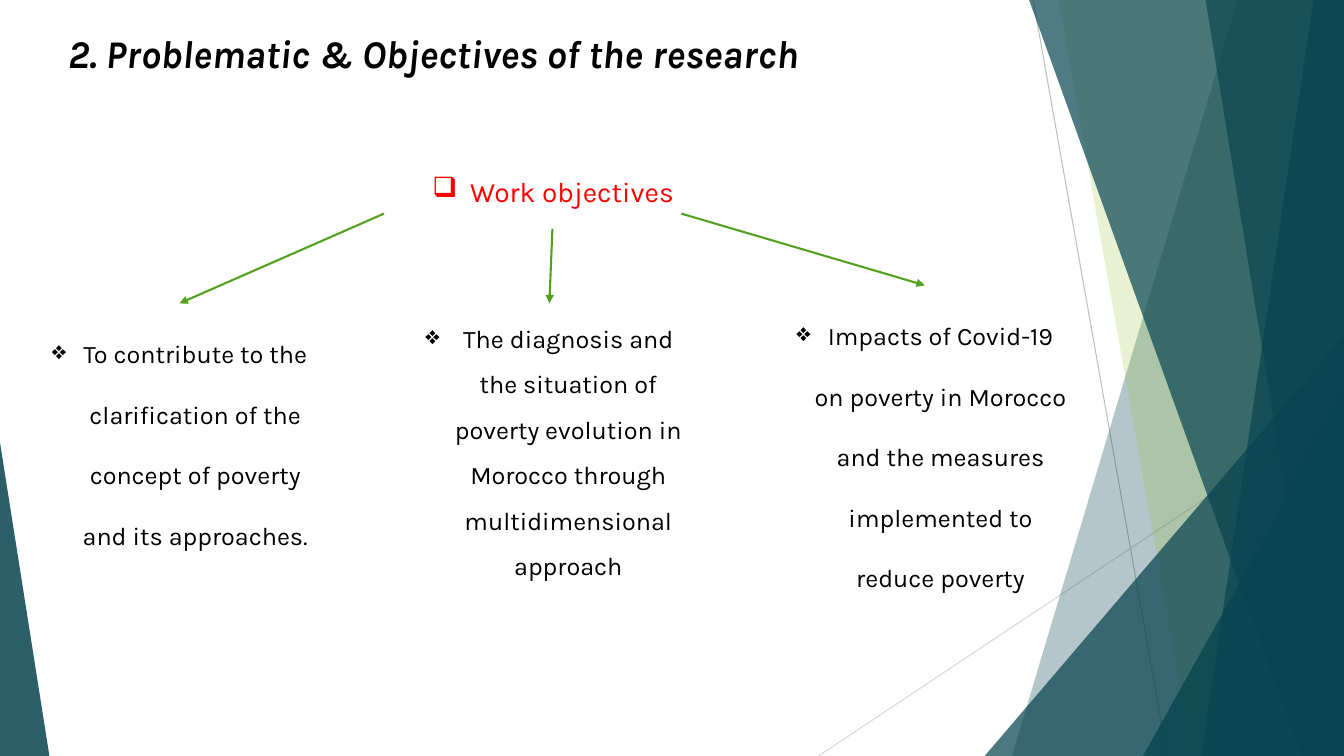
from lxml import etree
from pptx import Presentation
from pptx import util as u
from pptx.dml.color import RGBColor
from pptx.enum import shapes, text
from pptx.oxml import ns

Pt = u.Pt
WIDTH, HEIGHT = 960, 540
FONT = "Karla"
BLACK = RGBColor(0x00, 0x00, 0x00)
RED = RGBColor(0xFF, 0x00, 0x00)
TEAL = RGBColor(0x08, 0x44, 0x50)
LIME = RGBColor(0x90, 0xC2, 0x26)
GREEN = RGBColor(0x54, 0xA0, 0x21)
GREY = RGBColor(0xBF, 0xBF, 0xBF)
PALE_GREY = RGBColor(0xD9, 0xD9, 0xD9)

TITLE = "2. Problematic & Objectives of the research"
HEADING = "Work objectives"
# text, box (left, top, width, height), indent, line spacing, arrow start
OBJECTIVES = [
    ("To contribute to the clarification of the concept of poverty and its approaches.",
     (20.9, 216.7, 214.6, 181.4), 22.5, 2.0, (274.3, 152.6)),
    ("The diagnosis and the situation of poverty evolution in Morocco through "
     "multidimensional approach",
     (285.1, 216.7, 214.6, 203.8), 27, 1.5, (394.6, 163.4)),
    ("Impacts of Covid-19 on poverty in Morocco and the measures implemented to reduce poverty",
     (550.1, 203.8, 221, 225.4), 22.5, 2.0, (486.7, 152.6)),
]

HAIRLINES = [((738, 0), (833.8, HEIGHT), GREY), ((WIDTH, 290.2), (584.6, HEIGHT), PALE_GREY)]
# Bands reach the right edge: top-left x, bottom-left x, colour, opacity in percent
BACK_BANDS = [(884.2, 722.9, TEAL, 30), (756, 851.8, LIME, 20)]
FRONT_BANDS = [(735.1, 929.5, TEAL, 70), (938.2, 858.2, TEAL, 70), (861.1, 949, TEAL, 65)]
# Triangles stand on the bottom edge: left, top, width, apex, opacity in percent
BACK_TRIANGLE = (703.4, 239.8, 256.6, 1, 72)
FRONT_TRIANGLES = [(816.5, 283, 143.5, 1, 80), (0, 316.1, 35.3, 0, 85)]


def paint(shape, colour, opacity):
    shape.shadow.inherit = False
    shape.line.fill.background()
    shape.fill.solid()
    shape.fill.fore_color.rgb = colour
    srgb = shape.fill._xPr.find(".//" + ns.qn("a:srgbClr"))
    etree.SubElement(srgb, ns.qn("a:alpha"), val=str(opacity * 1000))


def add_band(page, top_x, bottom_x, colour, opacity):
    outline = page.shapes.build_freeform(Pt(top_x), 0)
    corners = [(WIDTH, 0), (WIDTH, HEIGHT), (bottom_x, HEIGHT)]
    outline.add_line_segments([(Pt(x), Pt(y)) for x, y in corners])
    paint(outline.convert_to_shape(), colour, opacity)


def add_triangle(page, left, top, width, apex, opacity):
    triangle = page.shapes.add_shape(shapes.MSO_SHAPE.ISOSCELES_TRIANGLE,
                                     Pt(left), Pt(top), Pt(width), Pt(HEIGHT - top))
    triangle.adjustments[0] = apex
    paint(triangle, TEAL, opacity)


def add_line(page, start, end, colour, weight):
    line = page.shapes.add_connector(shapes.MSO_CONNECTOR.STRAIGHT,
                                     *(Pt(value) for value in (*start, *end)))
    line.line.color.rgb = colour
    line.line.width = Pt(weight)
    etree.SubElement(line._element.spPr, ns.qn("a:effectLst"))
    return line


def add_text(page, words, place, size, colour=BLACK, centred=True,
             bullet=None, indent=0, spacing=1.0):
    box = page.shapes.add_textbox(*(Pt(value) for value in place))
    box.text_frame.word_wrap = True
    para = box.text_frame.paragraphs[0]
    para.text = words
    para.alignment = text.PP_ALIGN.CENTER if centred else text.PP_ALIGN.LEFT
    para.line_spacing = spacing
    if bullet:
        props = para._p.get_or_add_pPr()
        props.set("marL", str(Pt(indent)))
        props.set("indent", str(-Pt(indent)))
        etree.SubElement(props, ns.qn("a:buChar"), char=bullet)
    para.font.name = FONT
    para.font.size = Pt(size)
    para.font.color.rgb = colour
    return box


def main():
    deck = Presentation()
    deck.slide_width, deck.slide_height = Pt(WIDTH), Pt(HEIGHT)
    page = deck.slides.add_slide(deck.slide_layouts[6])

    for start, end, colour in HAIRLINES:
        add_line(page, start, end, colour, 0.75)
    for band in BACK_BANDS:
        add_band(page, *band)
    add_triangle(page, *BACK_TRIANGLE)
    for band in FRONT_BANDS:
        add_band(page, *band)
    for triangle in FRONT_TRIANGLES:
        add_triangle(page, *triangle)

    title = add_text(page, TITLE, (-18.7, 17.3, 655.9, 41), 28)
    title_font = title.text_frame.paragraphs[0].font
    title_font.bold = title_font.italic = True
    add_text(page, HEADING, (301.7, 121, 457.2, 31.7), 20, RED, False, "❑", 27)

    for words, place, indent, spacing, start in OBJECTIVES:
        box = add_text(page, words, place, 18, bullet="❖", indent=indent, spacing=spacing)
        left, top, width, _ = place
        arrow = add_line(page, start, (left + width / 2, top), GREEN, 1.5)
        arrow.end_connect(box, 0)
        etree.SubElement(arrow.line._get_or_add_ln(), ns.qn("a:tailEnd"), type="triangle")

    deck.save("out.pptx")


if __name__ == "__main__":
    main()
